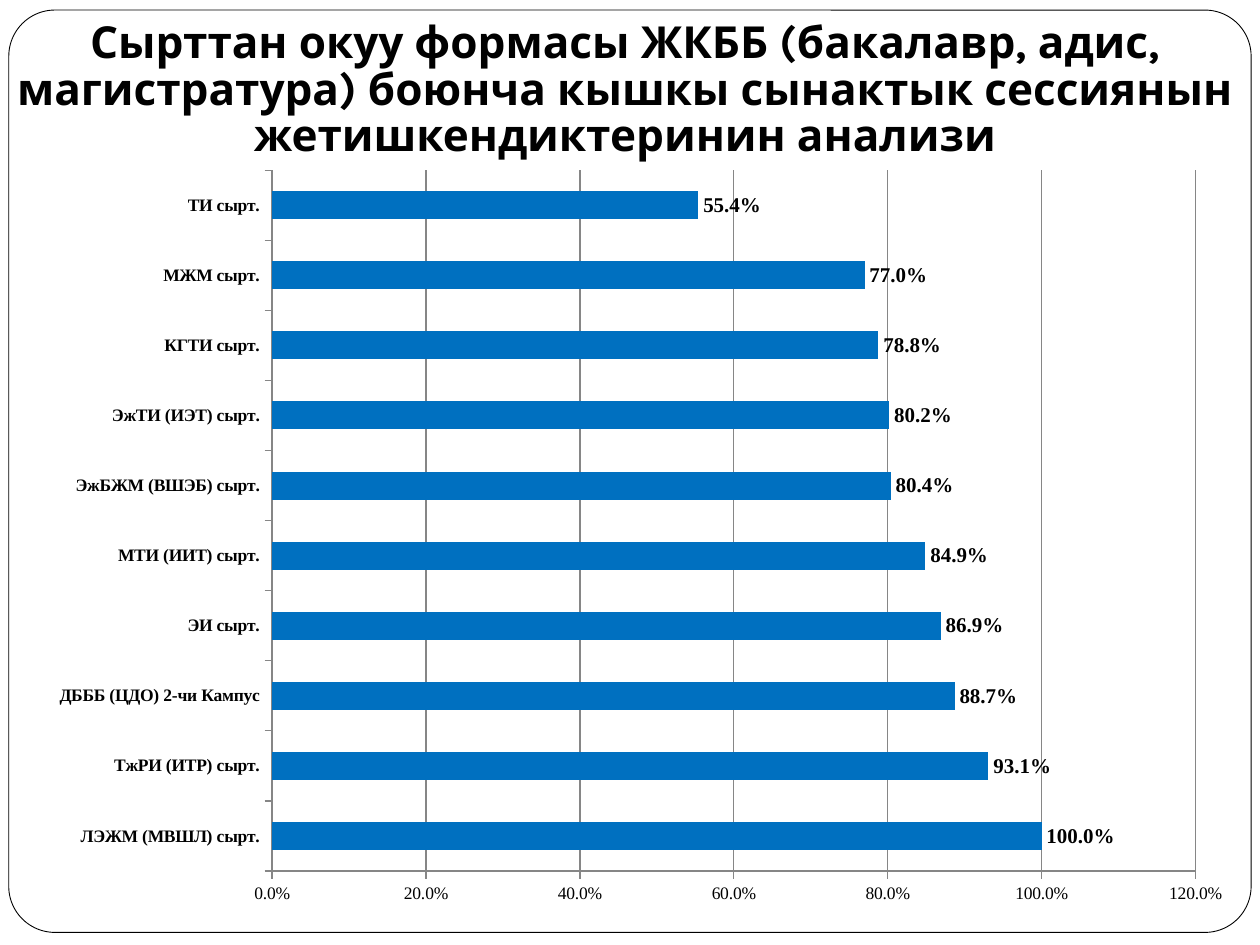
from lxml import etree
from pptx import Presentation
from pptx.chart.data import CategoryChartData
from pptx.dml.color import RGBColor
from pptx.enum.chart import XL_CHART_TYPE, XL_LABEL_POSITION, XL_TICK_MARK
from pptx.enum.shapes import MSO_SHAPE
from pptx.enum.text import MSO_ANCHOR, PP_ALIGN
from pptx.util import Inches, Pt

BAR = XL_CHART_TYPE.BAR_CLUSTERED
OUT_END = XL_LABEL_POSITION.OUTSIDE_END
TICK_OUT, TICK_NONE = XL_TICK_MARK.OUTSIDE, XL_TICK_MARK.NONE
ROUND = MSO_SHAPE.ROUNDED_RECTANGLE
BOTTOM, CENTER = MSO_ANCHOR.BOTTOM, PP_ALIGN.CENTER

TITLE = ("Сырттан окуу формасы ЖКББ (бакалавр, адис, магистратура) "
         "боюнча кышкы сынактык сессиянын жетишкендиктеринин анализи")
RATES = [
    ("ЛЭЖМ (МВШЛ) сырт.", 1),
    ("ТжРИ (ИТР) сырт.", 0.931),
    ("ДБББ (ЦДО) 2-чи Кампус", 0.887),
    ("ЭИ сырт.", 0.869),
    ("МТИ (ИИТ) сырт.", 0.849),
    ("ЭжБЖМ (ВШЭБ) сырт.", 0.804),
    ("ЭжТИ (ИЭТ) сырт.", 0.802),
    ("КГТИ сырт.", 0.788),
    ("МЖМ сырт.", 0.77),
    ("ТИ сырт.", 0.554),
]
PERCENT = "0.0%"
THEME = {
    "ink": RGBColor(0, 0, 0),
    "paper": RGBColor(255, 255, 255),
    "bar": RGBColor(0x00, 0x70, 0xC0),
    "grid": RGBColor(0x86, 0x86, 0x86),
    "head_font": "Karla",
    "body_font": "Times New Roman",
    "head": Pt(25.2),
    "label": Pt(12),
    "axis": Pt(10),
}


def place(*box):
    return [Inches(n) for n in box]


def style(font, size, face, bold):
    font.size, font.name, font.bold = size, face, bold
    font.color.rgb = THEME["ink"]


def add_frame(slide):
    frame = slide.shapes.add_shape(ROUND, *place(0.07, 0.08, 9.86, 7.32))
    frame.adjustments[0] = 0.05
    frame.shadow.inherit = False
    frame.fill.solid()
    frame.fill.fore_color.rgb = THEME["paper"]
    frame.line.color.rgb = THEME["ink"]
    frame.line.width = Pt(0.5)


def add_title(slide):
    text = slide.shapes.add_textbox(*place(-0.2, 0.44, 10.32, 0.94)).text_frame
    text.word_wrap = True
    text.vertical_anchor = BOTTOM
    text.margin_bottom = Inches(0.1)
    para = text.paragraphs[0]
    para.alignment = CENTER
    para.line_spacing = 0.88
    run = para.add_run()
    run.text = TITLE
    style(run.font, THEME["head"], THEME["head_font"], True)


def add_rates(slide):
    data = CategoryChartData(number_format=PERCENT)
    data.categories = [name for name, rate in RATES]
    data.add_series("Series 1", [rate for name, rate in RATES])
    chart = slide.shapes.add_chart(BAR, *place(0.28, 1.23, 9.61, 6.06), data).chart
    chart.has_legend = chart.has_title = False
    style(chart.font, THEME["axis"], THEME["body_font"], False)

    names, scale = chart.category_axis, chart.value_axis
    for axis, bold in ((names, True), (scale, False)):
        axis.major_tick_mark, axis.minor_tick_mark = TICK_OUT, TICK_NONE
        axis.format.line.color.rgb = THEME["grid"]
        style(axis.tick_labels.font, THEME["axis"], THEME["body_font"], bold)
    names.has_major_gridlines = False
    scale.has_major_gridlines = True
    scale.major_gridlines.format.line.color.rgb = THEME["grid"]
    scale.minimum_scale, scale.maximum_scale, scale.major_unit = 0, 1.2, 0.2
    scale.tick_labels.number_format = PERCENT
    scale.tick_labels.number_format_is_linked = False

    plot = chart.plots[0]
    plot.gap_width = 150
    plot.vary_by_categories = False
    bars = plot.series[0]
    bars.format.fill.solid()
    bars.format.fill.fore_color.rgb = THEME["bar"]
    labels = bars.data_labels
    labels.show_value = True
    labels.position = OUT_END
    labels.number_format = PERCENT
    labels.number_format_is_linked = False
    style(labels.font, THEME["label"], THEME["body_font"], True)


def main():
    deck = Presentation()
    deck.slide_width, deck.slide_height = place(10, 7.5)
    slide = deck.slides.add_slide(deck.slide_layouts[6])
    add_frame(slide)
    add_title(slide)
    add_rates(slide)
    deck.save("out.pptx")


if __name__ == "__main__":
    main()
